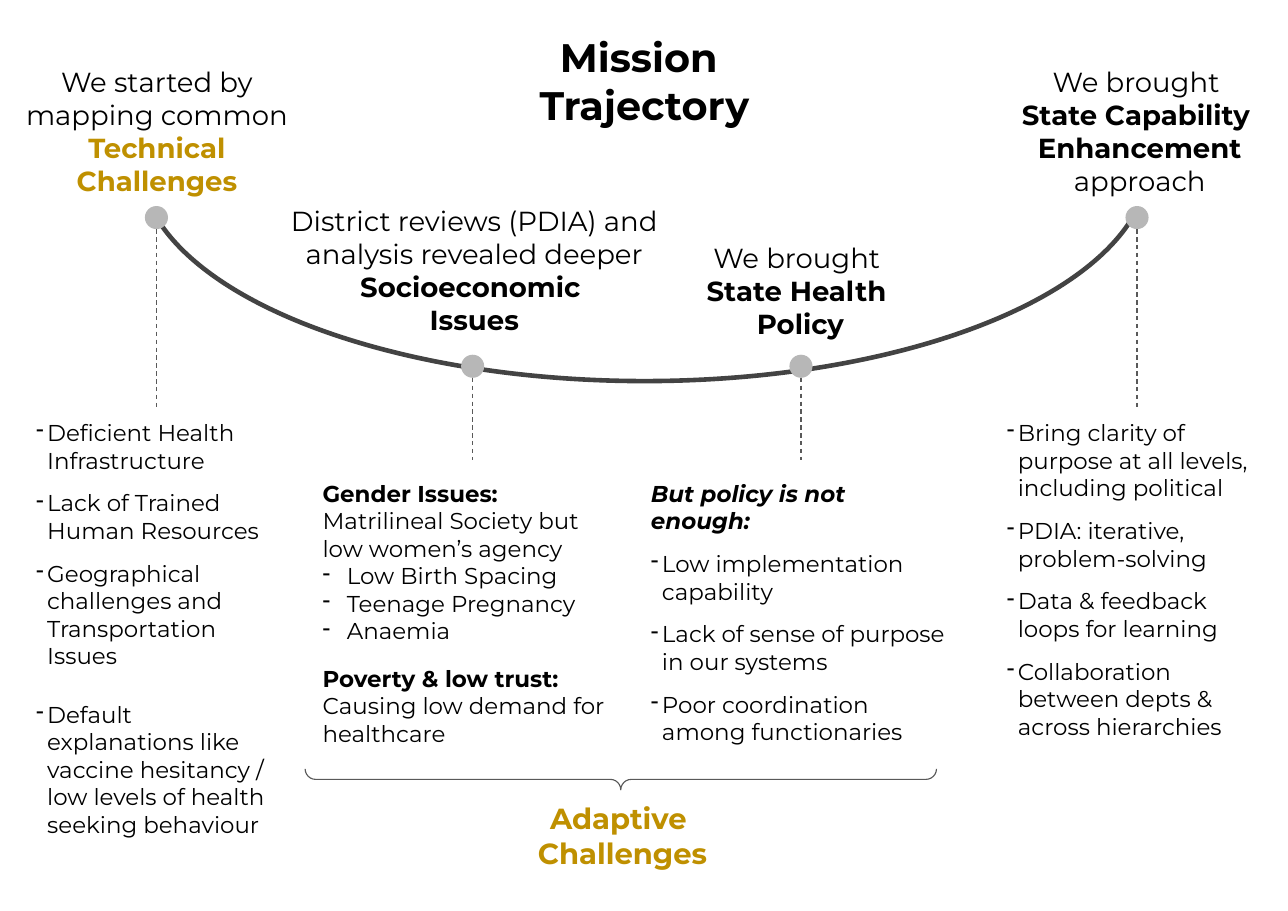
from lxml import etree
from pptx import Presentation
from pptx.dml.color import RGBColor
from pptx.enum.dml import MSO_LINE
from pptx.enum.shapes import MSO_CONNECTOR, MSO_SHAPE
from pptx.enum.text import MSO_ANCHOR, PP_ALIGN
from pptx.oxml.ns import qn
from pptx.util import Inches, Pt

ARC, BRACE, OVAL = MSO_SHAPE.ARC, MSO_SHAPE.LEFT_BRACE, MSO_SHAPE.OVAL
LINE, DASH = MSO_CONNECTOR.STRAIGHT, MSO_LINE.DASH
TOP, LEFT, MID = MSO_ANCHOR.TOP, PP_ALIGN.LEFT, PP_ALIGN.CENTER
FONT = "Montserrat"
DOT = 0.21
HUES = {"ink": "000000", "gold": "BF9000", "arc": "434343",
        "dot": "B7B7B7", "line": "595959"}

STOPS = [(1.42, 1.87, 3.7), (4.29, 3.22, 4.18),
         (7.27, 3.22, 4.18), (10.32, 1.87, 3.7)]

HEADS = [
    ((0.06, 0.49, 2.73, 1.41), 18,
     [[("We started by mapping common ", ""), ("Technical Challenges", "bg")]]),
    ((2.54, 1.75, 3.53, 1.41), 18,
     [[("District reviews (PDIA) and analysis revealed deeper ", ""),
       ("Socioeconomic ", "b")], [("Issues", "b")]]),
    ((5.9, 2.09, 2.73, 1.11), 18,
     [[("We brought ", "")], [("State Health ", "b")], [("Policy", "b")]]),
    ((8.98, 0.49, 2.73, 1.41), 18,
     [[("We brought ", "")], [("State Capability ", "b")],
      [("Enhancement ", "b"), ("approach", "")]]),
    ((4.01, 7.17, 3.28, 0.84), 19,
     [[("Adaptive ", "bg")], [("Challenges", "bg")]]),
]

LISTS = [
    ((0.23, 3.7, 2.39, 4.18), [
        ("Deficient Health Infrastructure", 0),
        ("Lack of Trained Human Resources", 10),
        ("Geographical challenges and Transportation Issues", 10),
        ("Default explanations like vaccine hesitancy / "
         "low levels of health seeking behaviour", 20)]),
    ((9.04, 3.7, 2.56, 3.15), [
        ("Bring clarity of purpose at all levels, including political", 0),
        ("PDIA: iterative, problem-solving", 10),
        ("Data & feedback loops for learning", 10),
        ("Collaboration between depts & across hierarchies", 10)]),
]

GENDER = [
    [("Gender Issues: ", "b"),
     ("Matrilineal Society but low women’s agency", "")],
    [("Low Birth Spacing", "")],
    [("Teenage Pregnancy", "")],
    [("Anaemia", "")],
    [("Poverty & low trust: ", "b"),
     ("Causing low demand for healthcare", "")],
]

POLICY = [
    [("But policy is not enough:", "bi")],
    [("Low implementation capability", "")],
    [("Lack of sense of purpose in our systems", "")],
    [("Poor coordination among functionaries", "")],
]


def hue(name):
    """Return a named colour."""
    return RGBColor.from_string(HUES[name])


def place(shape, box):
    """Move and size a shape."""
    shape.left, shape.top, shape.width, shape.height = map(Inches, box)


def write(shape, paras, size, align=LEFT, inset=0.1):
    """Fill a shape with paragraphs of styled runs."""
    frame = shape.text_frame
    frame.word_wrap = True
    frame.vertical_anchor = TOP
    frame.margin_left = frame.margin_right = Inches(inset)
    frame.margin_top = frame.margin_bottom = Inches(inset)
    frame.text = "\n".join("" for _ in paras)
    for para, parts in zip(frame.paragraphs, paras):
        para.alignment = align
        for text, style in parts:
            run = para.add_run()
            run.text = text
            font = run.font
            font.name, font.size = FONT, Pt(size)
            font.bold, font.italic = "b" in style, "i" in style
            font.color.rgb = hue("gold" if "g" in style else "ink")
    return frame.paragraphs


def add_text(slide, box, paras, size, align=LEFT):
    """Add a text box and return its paragraphs."""
    shape = slide.shapes.add_textbox(*map(Inches, box))
    return write(shape, paras, size, align)


def dash(para, gap=0, hang=0.1):
    """Give a paragraph a hanging dash and a gap above."""
    para.space_before = Pt(gap)
    props = para._p.get_or_add_pPr()
    props.set("marL", str(Inches(hang)))
    props.set("indent", str(-Inches(hang)))
    tint = etree.SubElement(props, qn("a:buClr"))
    etree.SubElement(tint, qn("a:srgbClr"), val=HUES["ink"])
    etree.SubElement(props, qn("a:buChar"), char="-")


def add_curve(slide, kind, box, adjust, color, width):
    """Add an unfilled outline shape."""
    shape = slide.shapes.add_shape(kind, *map(Inches, box))
    shape.shadow.inherit = False
    shape.fill.background()
    shape.line.color.rgb = hue(color)
    shape.line.width = Pt(width)
    for i, value in enumerate(adjust):
        shape.adjustments[i] = value
    return shape


def add_stop(slide, x, top, end):
    """Add a dot on the curve with a dashed line below it."""
    box = (x - DOT / 2, top, DOT, DOT)
    dot = slide.shapes.add_shape(OVAL, *map(Inches, box))
    dot.shadow.inherit = False
    dot.fill.solid()
    dot.fill.fore_color.rgb = hue("dot")
    dot.line.fill.background()
    ends = (x, top + DOT, x, end)
    stem = slide.shapes.add_connector(LINE, *map(Inches, ends))
    stem.line.color.rgb = hue("line")
    stem.line.width = Pt(0.75)
    stem.line.dash_style = DASH
    etree.SubElement(stem._element.spPr, qn("a:effectLst"))


def main():
    """Build the slide and save it."""
    deck = Presentation()
    deck.slide_width, deck.slide_height = Inches(11.69), Inches(8.27)
    slide = deck.slides.add_slide(deck.slide_layouts[5])
    title = slide.shapes.title
    place(title, (2.64, 0.25, 6.42, 0.97))
    write(title, [[("Mission ", "b")], [("Trajectory", "b")]], 26, MID, 0.05)

    add_curve(slide, ARC, (1.27, -0.52, 9.16, 3.98), (3.81, 103.99), "arc", 3)
    for stop in STOPS:
        add_stop(slide, *stop)
    for box, size, paras in HEADS:
        add_text(slide, box, paras, size, MID)

    for box, items in LISTS:
        paras = add_text(slide, box, [[(text, "")] for text, _ in items], 15)
        for para, (_, gap) in zip(paras, items):
            dash(para, gap)

    paras = add_text(slide, (2.83, 4.25, 2.83, 2.66), GENDER, 15)
    for para in paras[1:4]:
        dash(para, hang=0.22)
    paras[4].space_before = Pt(13)
    for para in add_text(slide, (5.81, 4.25, 2.91, 2.64), POLICY, 15)[1:]:
        dash(para, 10)

    brace = add_curve(slide, BRACE, (5.54, 4.21, 0.19, 5.73), (0.5, 0.5),
                      "line", 0.75)
    brace.rotation = 270
    deck.save("out.pptx")


if __name__ == "__main__":
    main()
